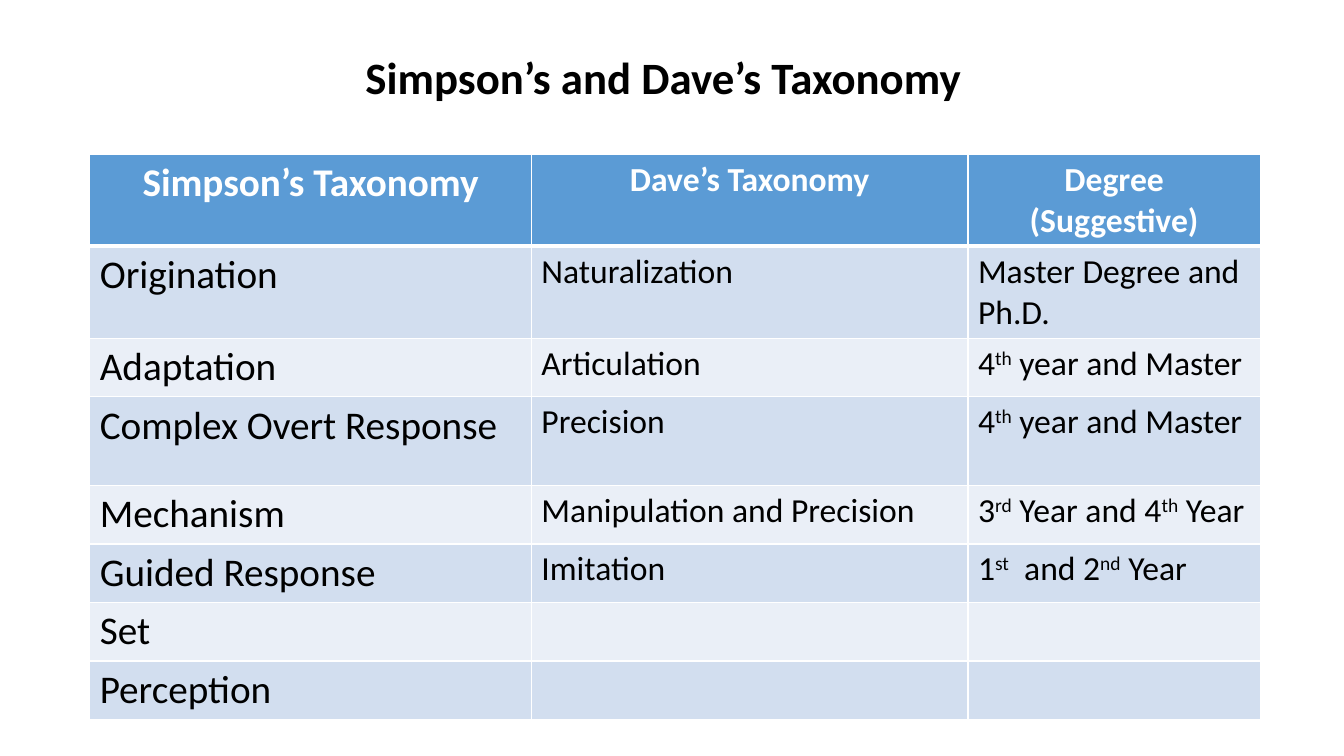
from lxml import etree
from pptx import Presentation
from pptx import util as u
from pptx.dml.color import RGBColor
from pptx.enum import text
from pptx.oxml.ns import qn

TITLE = "Simpson’s and Dave’s Taxonomy"
ROWS = [
    ("Simpson’s Taxonomy", "Dave’s Taxonomy", "Degree (Suggestive)"),
    ("Origination", "Naturalization", "Master Degree and Ph.D."),
    ("Adaptation", "Articulation", "4^th^ year and Master"),
    ("Complex Overt Response", "Precision", "4^th^ year and Master"),
    ("Mechanism", "Manipulation and Precision", "3^rd^ Year and 4^th^ Year"),
    ("Guided Response", "Imitation", "1^st^  and 2^nd^ Year"),
    ("Set", "", ""),
    ("Perception", "", ""),
]
COLUMN_WIDTHS = [4.38, 4.33, 2.9]
ROW_HEIGHTS = [0.91, 0.91, 0.58, 0.88] + [0.58] * 4
COLUMN_SIZES = [28, 24, 24]
FONT = "Calibri"
COLORS = {
    "header": "5B9BD5",
    "odd": "D2DEEF",
    "even": "EAEFF7",
    "white": "FFFFFF",
    "black": "000000",
}


def style_paragraph(para, size, color, bold, centered):
    para.font.name = FONT
    para.font.size = u.Pt(size)
    para.font.bold = bold
    para.font.color.rgb = RGBColor.from_string(COLORS[color])
    para.alignment = text.PP_ALIGN.CENTER if centered else text.PP_ALIGN.LEFT


def write_text(para, marked_text):
    for index, part in enumerate(marked_text.split("^")):
        if part:
            span = para.add_run()
            span.text = part
            if index % 2:
                span.font._element.set("baseline", "30000")


def add_borders(cell, row_index):
    properties = cell._tc.get_or_add_tcPr()
    for side in "LRTB":
        thick = (row_index, side) in ((0, "B"), (1, "T"))
        line = etree.SubElement(properties, qn(f"a:ln{side}"), w=str(u.Pt(3 if thick else 1)))
        fill = etree.SubElement(line, qn("a:solidFill"))
        etree.SubElement(fill, qn("a:srgbClr"), val=COLORS["white"])


def add_title(page):
    box = page.shapes.add_textbox(u.Inches(3.05), u.Inches(0.44), u.Inches(7.06), u.Inches(0.64))
    box.text_frame.word_wrap = True
    para = box.text_frame.paragraphs[0]
    write_text(para, TITLE)
    style_paragraph(para, 32, "black", True, True)


def add_taxonomy_table(page):
    table = page.shapes.add_table(
        len(ROWS), len(COLUMN_WIDTHS), u.Inches(0.89), u.Inches(1.53),
        u.Inches(sum(COLUMN_WIDTHS)), u.Inches(sum(ROW_HEIGHTS))).table
    for column, width in zip(table.columns, COLUMN_WIDTHS):
        column.width = u.Inches(width)
    for row_index, labels in enumerate(ROWS):
        table.rows[row_index].height = u.Inches(ROW_HEIGHTS[row_index])
        header = row_index == 0
        band = "header" if header else ("odd" if row_index % 2 else "even")
        for column_index, label in enumerate(labels):
            cell = table.cell(row_index, column_index)
            add_borders(cell, row_index)
            cell.fill.solid()
            cell.fill.fore_color.rgb = RGBColor.from_string(COLORS[band])
            para = cell.text_frame.paragraphs[0]
            write_text(para, label)
            style_paragraph(para, COLUMN_SIZES[column_index],
                            "white" if header else "black", header, header)


def main():
    deck = Presentation()
    deck.slide_width = u.Inches(13.33)
    deck.slide_height = u.Inches(7.5)
    page = deck.slides.add_slide(deck.slide_layouts[6])
    add_taxonomy_table(page)
    add_title(page)
    deck.save("out.pptx")


if __name__ == "__main__":
    main()
